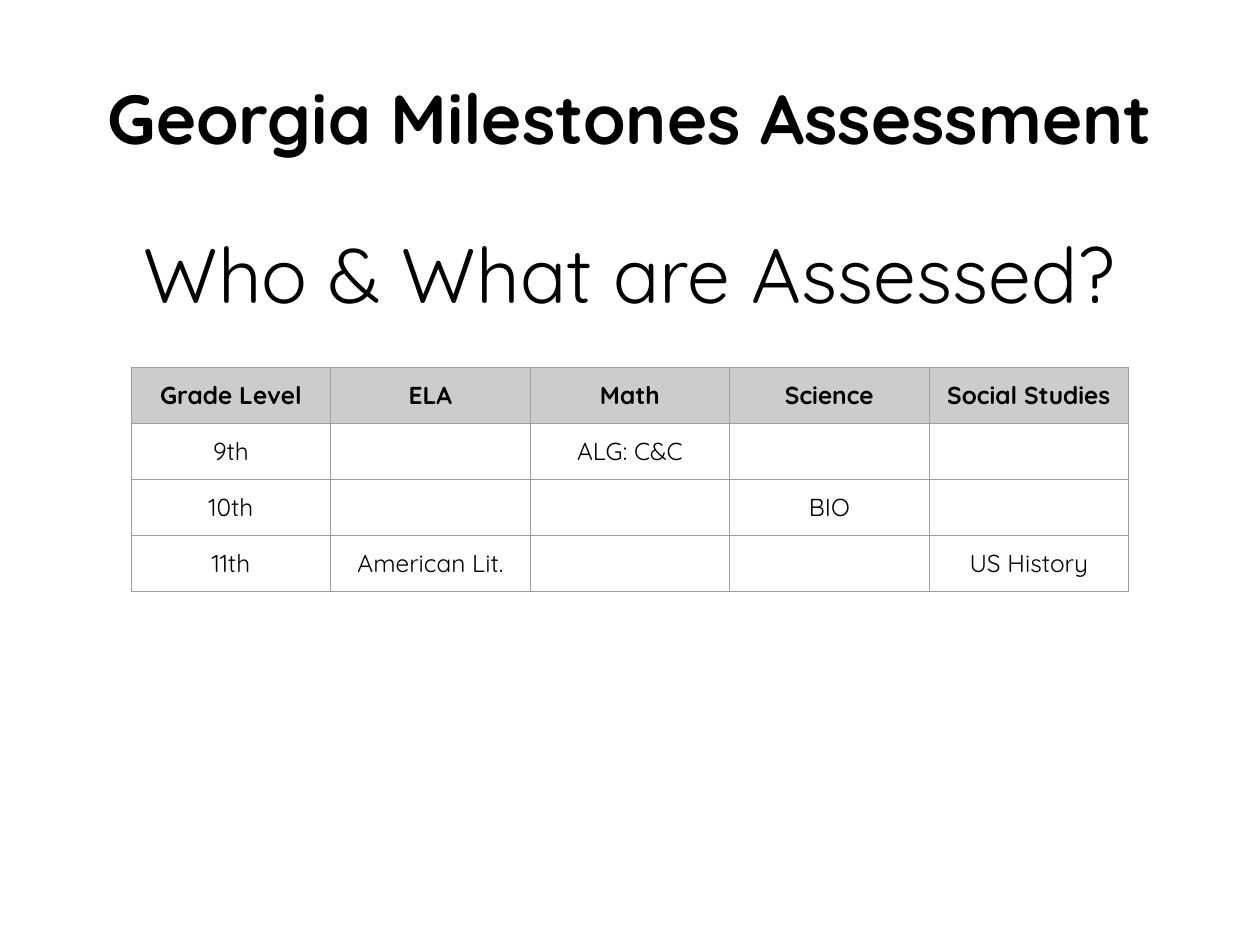
"""Build the Georgia Milestones Assessment slide."""
from dataclasses import dataclass

from lxml.etree import SubElement
from pptx import Presentation
from pptx.dml.color import RGBColor as RGB
from pptx.enum.text import MSO_ANCHOR as Anchor, MSO_AUTO_SIZE as AutoSize, PP_ALIGN as Align
from pptx.oxml.ns import qn
from pptx.util import Pt


@dataclass(frozen=True)
class Theme:
    font: str = "Quicksand"
    text: str = "000000"
    header: str = "CCCCCC"
    cell: str = "FFFFFF"
    border: str = "9E9E9E"
    border_width: float = 0.75
    title_size: float = 39.6
    body_size: float = 44
    table_size: float = 14


class SlideBuilder:
    def __init__(self, slide, theme):
        self.s = slide
        self.theme = theme

    def add_text(self, tf, text, size, bold=False):
        p = tf.paragraphs[0]
        p.alignment = Align.CENTER
        r = p.add_run()
        r.text = text
        style = {"name": self.theme.font, "size": Pt(size), "bold": bold}
        for name, value in style.items():
            setattr(r.font, name, value)
        r.font.color.rgb = RGB.from_string(self.theme.text)
        return p

    def place(self, sp, left, top, width, height, anchor):
        box = {"left": left, "top": top, "width": width, "height": height}
        for name, value in box.items():
            setattr(sp, name, Pt(value))
        frame = {"word_wrap": True, "auto_size": AutoSize.NONE, "vertical_anchor": anchor}
        for name, value in frame.items():
            setattr(sp.text_frame, name, value)
        return sp.text_frame

    def title(self, text, *box):
        tf = self.place(self.s.shapes.title, *box, Anchor.MIDDLE)
        self.add_text(tf, text, self.theme.title_size, bold=True)

    def body(self, text, *box):
        tf = self.place(self.s.placeholders[1], *box, Anchor.TOP)
        p = self.add_text(tf, text, self.theme.body_size)
        p.space_before = Pt(3.6)
        pPr = p._p.get_or_add_pPr()
        for name in ("marL", "indent"):
            pPr.set(name, "0")
        SubElement(pPr, qn("a:buNone"))

    def borders(self, cell):
        tcPr = cell._tc.get_or_add_tcPr()
        for i, side in enumerate(("lnL", "lnR", "lnT", "lnB")):
            ln = tcPr.makeelement(qn(f"a:{side}"), {"w": str(Pt(self.theme.border_width))})
            fill = SubElement(ln, qn("a:solidFill"))
            SubElement(fill, qn("a:srgbClr"), val=self.theme.border)
            tcPr.insert(i, ln)

    def cell(self, cell, text, header):
        cell.fill.solid()
        cell.fill.fore_color.rgb = RGB.from_string(self.theme.header if header else self.theme.cell)
        self.borders(cell)
        if text:
            for side in ("left", "right", "top", "bottom"):
                setattr(cell, f"margin_{side}", Pt(7.2))
            self.add_text(cell.text_frame, text, self.theme.table_size, bold=header)

    def table(self, rows, left, top, col_width, row_height):
        n_rows, n_cols = len(rows), len(rows[0])
        table = self.s.shapes.add_table(
            n_rows, n_cols, Pt(left), Pt(top), Pt(col_width * n_cols), Pt(row_height * n_rows)
        ).table
        table.first_row = table.horz_banding = False
        for i, row in enumerate(rows):
            for j, text in enumerate(row):
                self.cell(table.cell(i, j), text, header=i == 0)


def main():
    prs = Presentation()
    prs.slide_width, prs.slide_height = Pt(720), Pt(540)
    s = SlideBuilder(prs.slides.add_slide(prs.slide_layouts[1]), Theme())
    s.title("Georgia Milestones Assessment", 36, 21.6, 648, 90)
    s.body("Who & What are Assessed?", 36, 126, 648, 356.4)
    s.table(
        [
            ("Grade Level", "ELA", "Math", "Science", "Social Studies"),
            ("9th", "", "ALG: C&C", "", ""),
            ("10th", "", "", "BIO", ""),
            ("11th", "American Lit.", "", "", "US History"),
        ],
        left=75, top=210, col_width=114, row_height=30.24,
    )
    prs.save("out.pptx")


if __name__ == "__main__":
    main()
